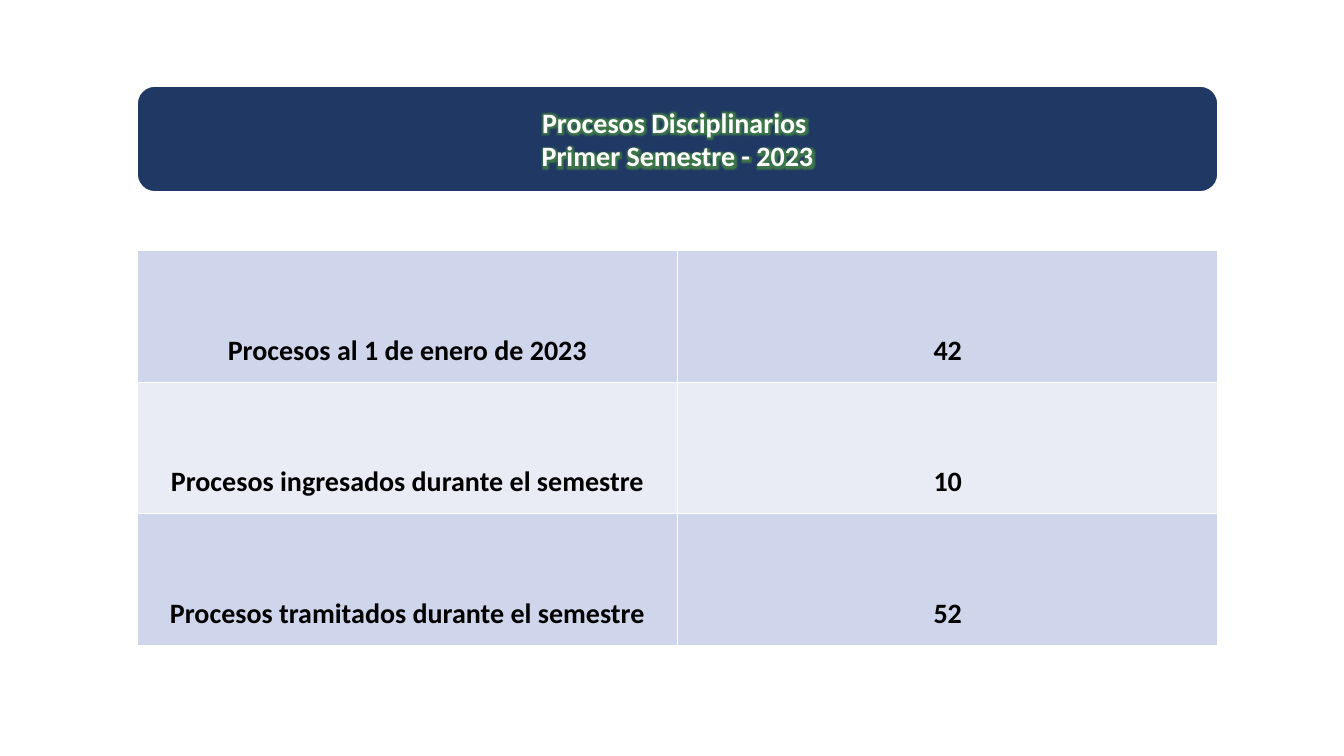
"""Build a slide that tabulates disciplinary processes for the first half of 2023."""
from dataclasses import dataclass

from lxml import etree
from pptx import Presentation
from pptx.dml.color import RGBColor
from pptx.enum.shapes import MSO_SHAPE
from pptx.enum.text import MSO_ANCHOR, MSO_AUTO_SIZE, PP_ALIGN
from pptx.oxml import parse_xml
from pptx.oxml.ns import nsdecls, qn
from pptx.util import Pt

ROUNDED = MSO_SHAPE.ROUNDED_RECTANGLE
MIDDLE = MSO_ANCHOR.MIDDLE
NO_AUTOFIT = MSO_AUTO_SIZE.NONE
CENTER = PP_ALIGN.CENTER

NAVY = RGBColor(0x20, 0x38, 0x64)
WHITE = RGBColor(0xFF, 0xFF, 0xFF)
BLACK = RGBColor(0, 0, 0)
GREEN = RGBColor(0x70, 0xAD, 0x47)
BANDS = (RGBColor(0xCF, 0xD5, 0xEA), RGBColor(0xE9, 0xEB, 0xF5))

LEFT, WIDTH = Pt(98), Pt(772)
BANNER_TOP, BANNER_HEIGHT = Pt(61.5), Pt(75.5)
TABLE_TOP, ROW_HEIGHT = Pt(179), Pt(94)
CELL_MARGIN = Pt(5)
BORDER = Pt(1)
GLOW_RADIUS = Pt(5)


@dataclass
class ProcessCount:
    label: str
    count: int


TITLE_LINES = ("Procesos Disciplinarios ", "Primer Semestre - 2023")
COUNTS = (
    ProcessCount("Procesos al 1 de enero de 2023", 42),
    ProcessCount("Procesos ingresados durante el semestre", 10),
    ProcessCount("Procesos tramitados durante el semestre", 52),
)


def format_paragraph(p, color: RGBColor) -> None:
    p.alignment = CENTER
    p.font.name = "Calibri"
    p.font.size = Pt(20)
    p.font.bold = True
    p.font.color.rgb = color


def add_glow(r) -> None:
    r.font._element.append(parse_xml(
        f'<a:effectLst {nsdecls("a")}><a:glow rad="{GLOW_RADIUS}">'
        f'<a:srgbClr val="{GREEN}"><a:satMod val="175000"/><a:alpha val="40000"/>'
        '</a:srgbClr></a:glow></a:effectLst>'))


def add_banner(s) -> None:
    sp = s.shapes.add_shape(ROUNDED, LEFT, BANNER_TOP, WIDTH, BANNER_HEIGHT)
    sp.shadow.inherit = False
    sp.fill.solid()
    sp.fill.fore_color.rgb = NAVY
    sp.line.color.rgb = WHITE
    sp.line.width = BORDER


def add_title(s) -> None:
    title = s.shapes.title
    title.left, title.top = LEFT, BANNER_TOP
    title.width, title.height = WIDTH, BANNER_HEIGHT
    s.shapes._spTree.append(title._element)
    tf = title.text_frame
    tf.text = "\n".join(TITLE_LINES)
    tf.word_wrap = True
    tf.auto_size = NO_AUTOFIT
    tf.vertical_anchor = MIDDLE
    for p in tf.paragraphs:
        format_paragraph(p, WHITE)
        add_glow(p.runs[0])


def set_borders(cell) -> None:
    tc_pr = cell._tc.get_or_add_tcPr()
    for i, side in enumerate(("lnL", "lnR", "lnT", "lnB")):
        ln = etree.Element(qn(f"a:{side}"), w=str(BORDER))
        fill = etree.SubElement(ln, qn("a:solidFill"))
        etree.SubElement(fill, qn("a:srgbClr"), val=str(WHITE))
        tc_pr.insert(i, ln)


def fill_cell(cell, text: str, band: RGBColor) -> None:
    cell.fill.solid()
    cell.fill.fore_color.rgb = band
    set_borders(cell)
    cell.vertical_anchor = MIDDLE
    cell.margin_left = cell.margin_right = CELL_MARGIN
    cell.margin_top = cell.margin_bottom = 0
    cell.text = text
    p = cell.text_frame.paragraphs[0]
    p.line_spacing = 3.0
    p.space_after = Pt(10)
    format_paragraph(p, BLACK)


def add_counts(s) -> None:
    table = s.shapes.add_table(len(COUNTS), 2, LEFT, TABLE_TOP, WIDTH,
                               ROW_HEIGHT * len(COUNTS)).table
    table.first_row = False
    for i, item in enumerate(COUNTS):
        band = BANDS[i % len(BANDS)]
        for j, text in enumerate((item.label, str(item.count))):
            fill_cell(table.cell(i, j), text, band)


def main() -> None:
    prs = Presentation()
    prs.slide_width, prs.slide_height = Pt(960), Pt(540)
    s = prs.slides.add_slide(prs.slide_layouts[5])
    add_banner(s)
    add_title(s)
    add_counts(s)
    prs.save("out.pptx")


if __name__ == "__main__":
    main()
